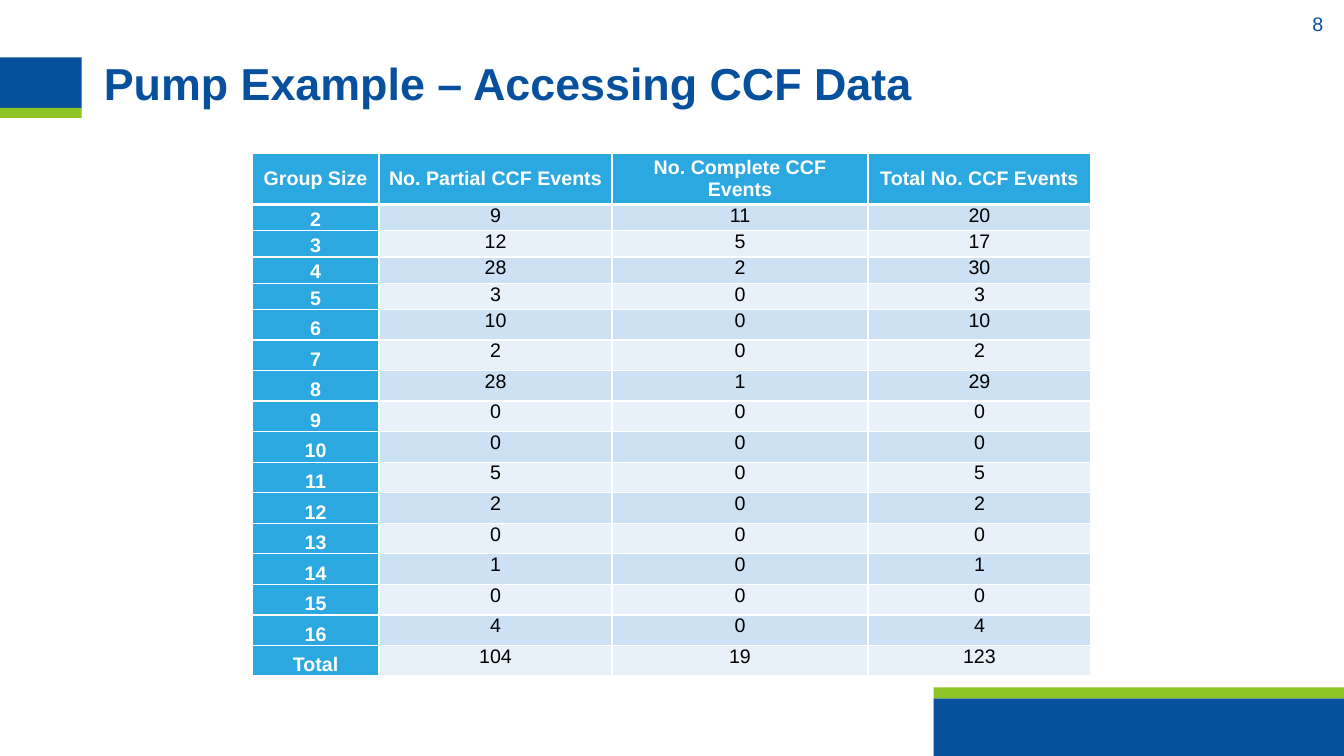
from dataclasses import dataclass

from lxml.etree import SubElement
from pptx import Presentation
from pptx.dml.color import RGBColor
from pptx.enum.shapes import MSO_SHAPE
from pptx.enum.text import MSO_ANCHOR, PP_ALIGN
from pptx.oxml.ns import qn
from pptx.util import Inches, Pt


@dataclass(frozen=True)
class Theme:
    font: str = "Arial"
    navy: str = "06509D"
    green: str = "8EC423"
    sky: str = "2CA8E1"
    bands: tuple = ("CDE1F4", "E8F1F9")
    white: str = "FFFFFF"
    black: str = "000000"
    title_size: int = 32
    body_size: int = 14


THEME = Theme()

HEADINGS = ("Group Size", "No. Partial CCF Events",
            "No. Complete CCF Events", "Total No. CCF Events")
# Events for group sizes 2 to 16
PARTIAL = (9, 12, 28, 3, 10, 2, 28, 0, 0, 5, 2, 0, 1, 0, 4)
COMPLETE = (11, 5, 2, 0, 0, 0, 1, 0, 0, 0, 0, 0, 0, 0, 0)

COLUMN_WIDTHS = (1.26, 2.31, 2.54, 2.21)
HEADER_HEIGHT = 0.51
SHORT_ROW_HEIGHT = 0.26
SHORT_ROWS = 4


def write_text(frame, text, *, size=THEME.body_size, color=THEME.black, bold=False,
               align=PP_ALIGN.CENTER, spacing=None):
    paragraph = frame.paragraphs[0]
    paragraph.alignment = align
    if spacing:
        paragraph.line_spacing = spacing
    run = paragraph.add_run()
    run.text = text
    run.font.name = THEME.font
    run.font.size = Pt(size)
    run.font.bold = bold
    run.font.color.rgb = RGBColor.from_string(color)


def set_margins(target, left, top, right, bottom):
    target.margin_left, target.margin_top = Inches(left), Inches(top)
    target.margin_right, target.margin_bottom = Inches(right), Inches(bottom)


def add_bar(slide, left, top, width, height, color):
    bar = slide.shapes.add_shape(MSO_SHAPE.RECTANGLE, Inches(left), Inches(top),
                                 Inches(width), Inches(height))
    bar.shadow.inherit = False
    bar.fill.solid()
    bar.fill.fore_color.rgb = RGBColor.from_string(color)
    bar.line.fill.background()


def add_corner_band(slide, left, top, width, height):
    stripe = 0.11
    add_bar(slide, left, top + stripe, width, height - stripe, THEME.navy)
    add_bar(slide, left, top, width, stripe, THEME.green)


def add_title_marker(slide, left, top, width, height):
    stripe = 0.1
    add_bar(slide, left, top, width, height - stripe, THEME.navy)
    add_bar(slide, left, top + height - stripe, width, stripe, THEME.green)


def add_text_region(slide, left, top, width, height, text, margins,
                    anchor=MSO_ANCHOR.TOP, **text_format):
    region = slide.shapes.add_textbox(Inches(left), Inches(top),
                                      Inches(width), Inches(height))
    frame = region.text_frame
    frame.word_wrap = True
    frame.vertical_anchor = anchor
    set_margins(frame, *margins)
    write_text(frame, text, **text_format)


def set_borders(cell, bottom_width):
    """Give the cell white edges; call before setting its fill."""
    properties = cell._tc.get_or_add_tcPr()
    edges = (("a:lnL", 1), ("a:lnR", 1), ("a:lnT", 1), ("a:lnB", bottom_width))
    for tag, width in edges:
        edge = SubElement(properties, qn(tag), w=str(Pt(width)))
        fill = SubElement(edge, qn("a:solidFill"))
        SubElement(fill, qn("a:srgbClr"), val=THEME.white)


def event_rows():
    """Headings, one row per group size, and the column totals."""
    rows = [(size, partial, complete, partial + complete)
            for size, (partial, complete) in enumerate(zip(PARTIAL, COMPLETE), start=2)]
    sums = [sum(column) for column in list(zip(*rows))[1:]]
    return [HEADINGS, *rows, ("Total", *sums)]


def add_event_table(slide, left, top, width, height):
    rows = event_rows()
    table = slide.shapes.add_table(len(rows), len(HEADINGS), Inches(left), Inches(top),
                                   Inches(width), Inches(height)).table
    table.first_col = True
    table.horz_banding = False
    for column, column_width in zip(table.columns, COLUMN_WIDTHS):
        column.width = Inches(column_width)

    tall_rows = len(rows) - 1 - SHORT_ROWS
    tall_height = (height - HEADER_HEIGHT - SHORT_ROWS * SHORT_ROW_HEIGHT) / tall_rows
    row_heights = ([HEADER_HEIGHT] + [SHORT_ROW_HEIGHT] * SHORT_ROWS
                   + [tall_height] * tall_rows)

    for r, (values, row_height) in enumerate(zip(rows, row_heights)):
        table.rows[r].height = Inches(row_height)
        for c, value in enumerate(values):
            cell = table.cell(r, c)
            is_heading = r == 0 or c == 0
            if r == 0:
                cell.vertical_anchor = MSO_ANCHOR.MIDDLE
            else:
                cell.vertical_anchor = MSO_ANCHOR.BOTTOM if c == 0 else MSO_ANCHOR.TOP
            set_margins(cell, 0.07, 0, 0.07, 0)
            set_borders(cell, bottom_width=3 if r == 0 else 1)
            cell.fill.solid()
            cell.fill.fore_color.rgb = RGBColor.from_string(
                THEME.sky if is_heading else THEME.bands[(r - 1) % 2])
            write_text(cell.text_frame, str(value), bold=is_heading,
                       color=THEME.white if is_heading else THEME.black)


def main():
    deck = Presentation()
    deck.slide_width, deck.slide_height = Inches(13.33), Inches(7.5)
    slide = deck.slides.add_slide(deck.slide_layouts[6])
    add_corner_band(slide, 9.26, 6.82, 4.07, 0.68)
    add_title_marker(slide, 0, 0.57, 0.81, 0.6)
    add_text_region(slide, 1.03, 0.61, 11.39, 1.1, "Pump Example – Accessing CCF Data",
                    (0, 0, 0.1, 0.05), size=THEME.title_size, color=THEME.navy,
                    bold=True, align=PP_ALIGN.LEFT, spacing=0.9)
    add_text_region(slide, 12.83, 0.1, 0.48, 0.4, "8", (0.1, 0.05, 0.1, 0.17),
                    anchor=MSO_ANCHOR.MIDDLE, color=THEME.navy)
    add_event_table(slide, 2.5, 1.52, sum(COLUMN_WIDTHS), 5.19)
    deck.save("out.pptx")


if __name__ == "__main__":
    main()
